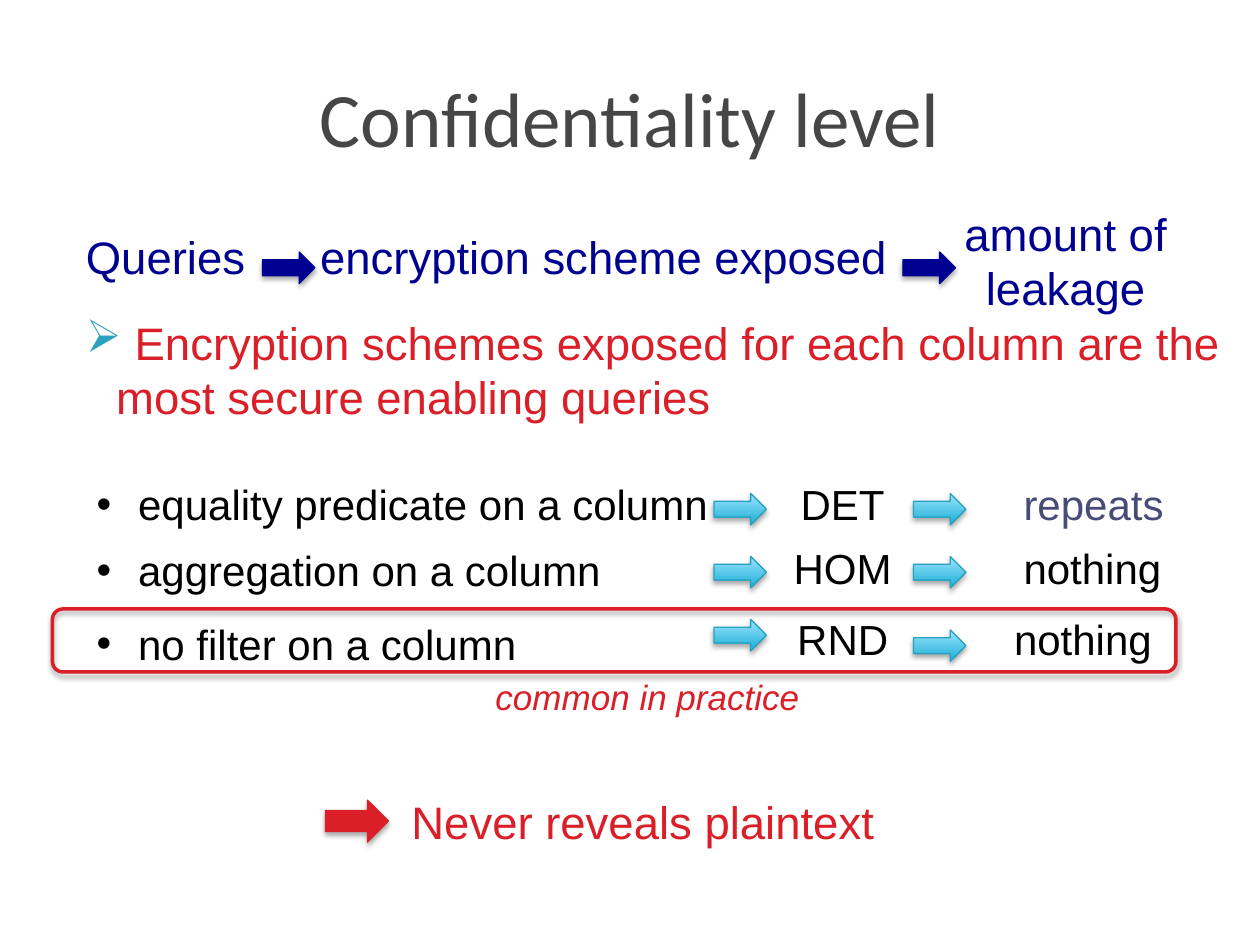
from lxml.etree import SubElement
from pptx import Presentation
from pptx.dml.color import RGBColor
from pptx.enum.shapes import MSO_SHAPE
from pptx.enum.text import MSO_ANCHOR, MSO_AUTO_SIZE, PP_ALIGN
from pptx.oxml.ns import qn
from pptx.util import Inches, Pt

COLORS = {
    "title": "464646", "navy": "000090", "red": "DA1F28", "black": "000000",
    "slate": "474B78", "teal": "2DA2BF", "edge": "28A1BE",
    "deep": "17AFD5", "pale": "A1E3FF",
}

prs = Presentation()
prs.slide_width, prs.slide_height = Inches(10), Inches(7.5)
slide = prs.slides.add_slide(prs.slide_layouts[1])
UNIT = prs.slide_width / 120  # grid of 120 columns by 90 rows


def write(sp, box, text, color, size=26, align=PP_ALIGN.LEFT, font="Arial", italic=False):
    """Place a text shape on the grid and fill it, one paragraph per line."""
    sp.left, sp.top, sp.width, sp.height = [int(v * UNIT) for v in box]
    tf = sp.text_frame
    tf.word_wrap, tf.auto_size = True, MSO_AUTO_SIZE.NONE
    tf.text = text
    for p in tf.paragraphs:
        p.alignment, p.space_before = align, Pt(0)
        f = p.runs[0].font
        formats = {"name": font, "size": Pt(size), "italic": italic}
        for name, value in formats.items():
            setattr(f, name, value)
        f.color.rgb = RGBColor.from_string(COLORS[color])
    return tf


def draw(kind, box, line, fill=None, width=0.75):
    """Draw a preset shape on the grid with a soft shadow below it."""
    sp = slide.shapes.add_shape(kind, *[int(v * UNIT) for v in box])
    if fill is None:
        sp.fill.background()
    elif fill == "gradient":
        sp.fill.gradient()
        sp.fill.gradient_angle = 90
        for stop, name in zip(sp.fill.gradient_stops, ("deep", "pale")):
            stop.color.rgb = RGBColor.from_string(COLORS[name])
    else:
        sp.fill.solid()
        sp.fill.fore_color.rgb = RGBColor.from_string(COLORS[fill])
    sp.line.color.rgb = RGBColor.from_string(COLORS[line])
    sp.line.width = Pt(width)
    sp.shadow.inherit = False
    effects = sp._element.spPr.find(qn("a:effectLst"))
    shadow = SubElement(effects, qn("a:outerShdw"), blurRad=str(Pt(3.1)),
                        dist=str(Pt(1.8)), dir="5400000", rotWithShape="0")
    tint = SubElement(shadow, qn("a:srgbClr"), val=COLORS["black"])
    SubElement(tint, qn("a:alpha"), val="35000")


# Title
title = write(slide.shapes.title, (6, 3.6, 108, 15), "Confidentiality level",
              "title", 44, PP_ALIGN.CENTER, "Calibri")
title.vertical_anchor = MSO_ANCHOR.MIDDLE

# Heading chain: queries, scheme, leakage
for box, text, align in [
    ((7, 21.2, 18, 6), "Queries", PP_ALIGN.LEFT),
    ((29.3, 21.2, 58, 6), "encryption scheme exposed", PP_ALIGN.LEFT),
    ((87, 19, 29, 11.8), "amount of leakage", PP_ALIGN.CENTER),
]:
    write(slide.shapes.add_textbox(0, 0, 0, 0), box, text, "navy", align=align)
for col in (25, 86):
    draw(MSO_SHAPE.RIGHT_ARROW, (col, 24, 5, 3), "navy", "navy")

# Main claim with an arrowhead bullet
claim = write(slide.shapes.add_textbox(0, 0, 0, 0), (7, 29.4, 113, 11.5),
              " Encryption schemes exposed for each column are the most secure enabling queries",
              "red")
pPr = claim.paragraphs[0]._p.get_or_add_pPr()
pPr.set("marL", str(Inches(0.24)))
pPr.set("indent", str(-Inches(0.24)))
SubElement(SubElement(pPr, qn("a:buClr")), qn("a:srgbClr"), val=COLORS["teal"])
SubElement(pPr, qn("a:buChar"), char="➢")

# Frame around the common case
draw(MSO_SHAPE.ROUNDED_RECTANGLE, (5, 58, 107, 6), "red", width=2)

# Query kinds as the body list
kinds = ["equality predicate on a column", "aggregation on a column", "no filter on a column"]
body = write(slide.placeholders[1], (8, 45, 62, 20), "\n".join(kinds), "black", 24)
for p, gap in zip(body.paragraphs, (0, 9, 13)):
    p.space_before = Pt(gap)
    pPr = p._p.get_or_add_pPr()
    pPr.set("marL", str(Inches(0.33)))
    pPr.set("indent", str(-Inches(0.33)))
    SubElement(pPr, qn("a:buChar"), char="•")

# Scheme and leakage columns: text row, arrow rows, leakage column
for scheme, leak, color, row, arrows, leak_col in [
    ("DET", "repeats", "slate", 45, (47, 47), 96.3),
    ("HOM", "nothing", "black", 51.1, (53, 53), 96.3),
    ("RND", "nothing", "black", 57.8, (59, 60), 95.4),
]:
    write(slide.shapes.add_textbox(0, 0, 0, 0), (73, row, 14.5, 6), scheme,
          "black", 24, PP_ALIGN.CENTER)
    write(slide.shapes.add_textbox(0, 0, 0, 0), (leak_col, row, 18, 6), leak, color, 24)
    for col, arrow_row in zip((68, 87), arrows):
        draw(MSO_SHAPE.RIGHT_ARROW, (col, arrow_row, 5, 3), "edge", "gradient")

# Note under the frame
write(slide.shapes.add_textbox(0, 0, 0, 0), (46, 63.7, 45, 5.3),
      "common in practice", "red", 20, italic=True)

# Conclusion
draw(MSO_SHAPE.RIGHT_ARROW, (31, 76.2, 6, 4), "red", "red")
write(slide.shapes.add_textbox(0, 0, 0, 0), (38, 75, 51, 6.5), "Never reveals plaintext", "red")

prs.save("out.pptx")
